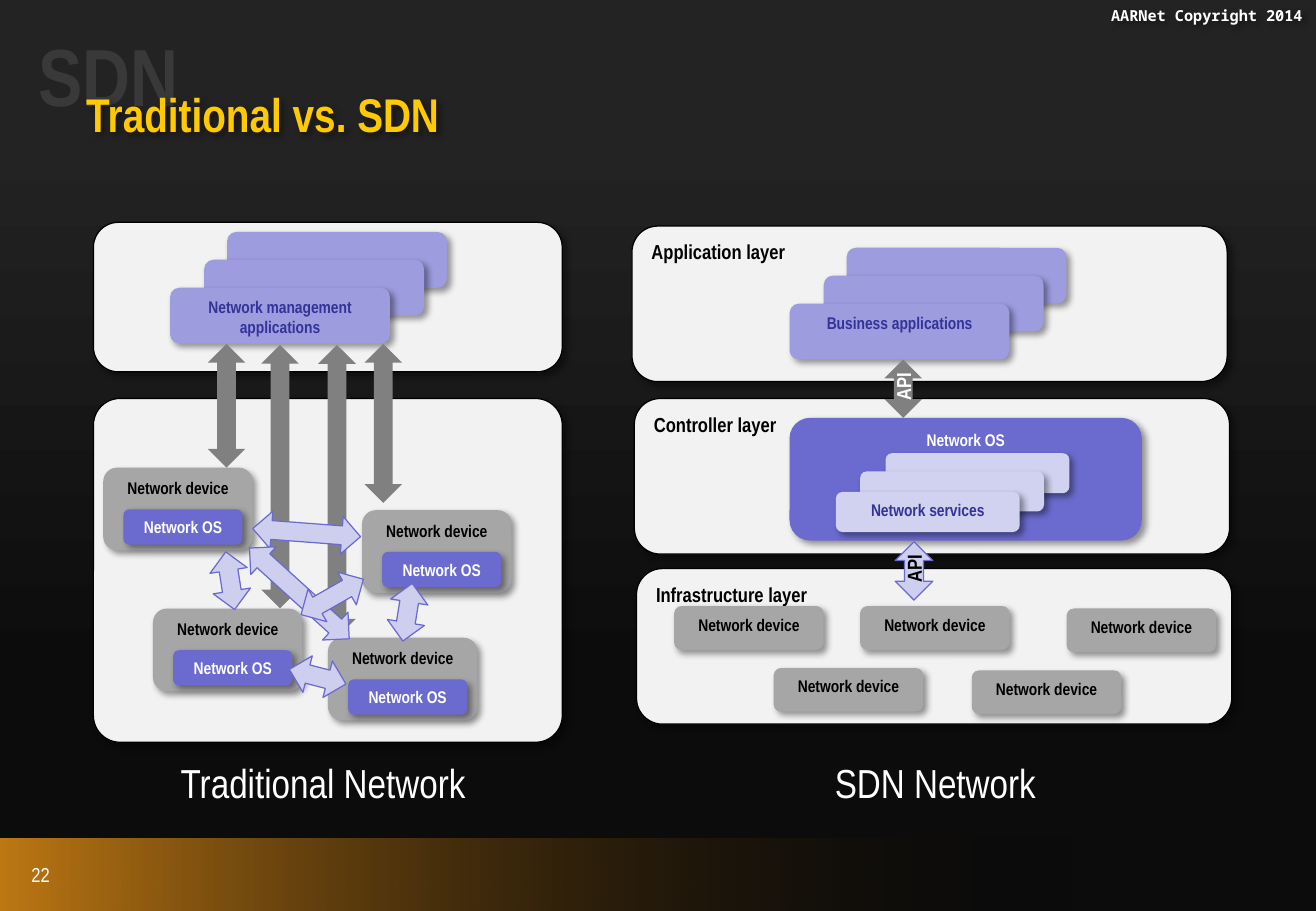
from lxml.etree import SubElement
from pptx import Presentation
from pptx.dml.color import RGBColor
from pptx.enum.shapes import MSO_SHAPE as Kind
from pptx.enum.text import MSO_ANCHOR as Anchor, MSO_AUTO_SIZE as AutoSize, PP_ALIGN as Align
from pptx.oxml.ns import qn
from pptx.util import Pt

COLORS = {
    "ink": "000000", "white": "FFFFFF", "gold": "FFC903", "amber": "D18415",
    "night": "0C0C0C", "dusk": "232323", "panel": "F2F2F2", "device": "A6A6A6",
    "arrow": "808080", "os": "6B6BCF", "app": "9C9CDF", "service": "D1D1F0",
    "link": "CECEEF", "navy": "333399",
}
FONT = "Arial Narrow"

TITLE = "Traditional vs. SDN"
TOPIC = "SDN"
COPYRIGHT = "AARNet Copyright 2014"
PAGE = "22"
CAPTIONS = [("Traditional Network", 21.6), ("SDN Network", 384.5)]

DEVICE, OS = "Network device", "Network OS"
LAYERS = [
    ("Application layer", 374.6, 134),
    ("Controller layer", 376, 236.2),
    ("Infrastructure layer", 377.3, 337),
]
TRADITIONAL_PANELS = [(131.8, 88.6, 0.1667), (236.2, 203.8, 0.078)]

APP_SIZE, APP_STEPS = (130.3, 33.1), [(33.8, -33.1), (20.2, -16.6), (0, 0)]
SERVICE_SIZE, SERVICE_STEPS = (109, 23.8), [(29.5, -23), (14.4, -12.2), (0, 0)]
STACKS = [
    ("Network management applications", (100.8, 170.6), APP_SIZE, APP_STEPS, "app"),
    ("Business applications", (468, 180), APP_SIZE, APP_STEPS, "app"),
    ("Network services", (495.4, 291.6), SERVICE_SIZE, SERVICE_STEPS, "service"),
]

SDN_DEVICES = [(399.6, 359.3), (509.8, 359.3), (632.2, 360.7), (458.6, 396), (576, 397.4)]
TRADITIONAL_DEVICES = [(61.2, 277.2), (214.6, 302.4), (90.7, 360.7), (194.4, 378)]
DEVICE_WIDTH = 88.6
OS_OFFSET, OS_SIZE = (11.9, 24.7), (70.6, 20.9)

ARROW_WIDTH = 22.3
MANAGEMENT_ARROWS = [
    (123.1, 203.8, 73.4), (216, 203.8, 94.3), (154.8, 204.5, 156.2), (188.6, 204.5, 173.5),
]
DEVICE_LINKS = [
    (170.6, 283.7, 64.1, 274.3), (125.3, 326.9, 34.6, 351.2), (230.4, 345.6, 34.6, 9.2),
    (177.1, 383.8, 34.6, 284.5), (166.3, 311.8, 79.9, 312.3), (185.8, 332.6, 42.5, 60.4),
]
APIS = [(524.2, 213.1, "arrow", None, "white"), (530.6, 321.1, "link", "os", "ink")]

deck = Presentation()
deck.slide_width, deck.slide_height = Pt(780), Pt(540)
slide = deck.slides.add_slide(deck.slide_layouts[5])
shapes = slide.shapes


def rgb(name):
    return RGBColor.from_string(COLORS[name])


def set_alpha(color_element, percent):
    SubElement(color_element, qn("a:alpha"), val=str(percent * 1000))


def set_gradient(fill, angle, stops):
    fill.gradient()
    fill.gradient_angle = angle
    for stop, (position, color) in zip(fill.gradient_stops, stops):
        stop.position = position
        stop.color.rgb = rgb(color)


def cast_shadow(shape):
    shape.shadow.inherit = False
    effects = shape.element.spPr.find(qn("a:effectLst"))
    shadow = SubElement(effects, qn("a:outerShdw"), blurRad="50800", dist="38100",
                        dir="2700000", algn="tl", rotWithShape="0")
    set_alpha(SubElement(shadow, qn("a:srgbClr"), val=COLORS["ink"]), 40)


def write(shape, text, size, color, align=Align.CENTER, bold=True, font=FONT):
    frame = shape.text_frame
    frame.word_wrap = True
    frame.auto_size = AutoSize.NONE
    frame.vertical_anchor = Anchor.TOP
    paragraph = frame.paragraphs[0]
    paragraph.alignment = align
    run = paragraph.add_run()
    run.text = text
    run.font.name, run.font.size, run.font.bold = font, Pt(size), bold
    run.font.color.rgb = rgb(color)
    return run


def add_label(x, y, width, height, *text, **style):
    label = shapes.add_textbox(Pt(x), Pt(y), Pt(width), Pt(height))
    write(label, *text, **style)
    return label


def add_block(kind, x, y, width, height, fill, line=None, shadow=True):
    block = shapes.add_shape(kind, Pt(x), Pt(y), Pt(width), Pt(height))
    block.shadow.inherit = False
    block.fill.solid()
    block.fill.fore_color.rgb = rgb(fill)
    if line:
        block.line.color.rgb = rgb(line)
        block.line.width = Pt(0.75)
    else:
        block.line.fill.background()
    if shadow:
        cast_shadow(block)
    return block


def add_card(x, y, width, height, fill, line=None):
    return add_block(Kind.ROUNDED_RECTANGLE, x, y, width, height, fill, line)


def add_arrow(x, y, height, fill, line=None, rotation=0):
    arrow = add_block(Kind.UP_DOWN_ARROW, x, y, ARROW_WIDTH, height, fill, line, shadow=False)
    arrow.rotation = rotation


def add_stack(text, front, size, steps, fill):
    for dx, dy in steps:
        card = add_card(front[0] + dx, front[1] + dy, *size, fill)
    write(card, text, 10, "navy")


set_gradient(slide.background.fill, 90, [(0.26, "night"), (0.85, "dusk")])
band = add_block(Kind.RECTANGLE, -1.4, 496.8, 639.4, 43.2, "ink", shadow=False)
set_gradient(band.fill, 180, [(0, "ink"), (1, "amber")])
for color_element, percent in zip(band.element.spPr.iter(qn("a:srgbClr")), (0, 91)):
    set_alpha(color_element, percent)

cast_shadow(add_label(617.8, 0, 161.3, 37.4, COPYRIGHT, 9, "white",
                      align=Align.RIGHT, font="Noto Sans Mono"))
add_label(1.4, 507.6, 45.4, 28, PAGE, 12, "white", bold=False)
topic = add_label(15.8, 11.5, 601, 65.5, TOPIC, 48, "white", align=Align.LEFT)
set_alpha(next(topic.element.txBody.iter(qn("a:srgbClr"))), 10)

title = shapes.title
title.left, title.top, title.width, title.height = Pt(43.9), Pt(50.5), Pt(730), Pt(40)
write(title, TITLE, 28, "gold", align=Align.LEFT)
title.text_frame.paragraphs[0].line_spacing = 0.9
cast_shadow(title)
topic.element.addnext(title.element)

for name, x, y in LAYERS:
    write(add_card(x, y, 352.8, 92.2, "panel", "ink"), name, 12, "ink", align=Align.LEFT)
for y, height, rounding in TRADITIONAL_PANELS:
    add_card(55.4, y, 277.9, height, "panel", "ink").adjustments[0] = rounding

write(add_card(468, 247.7, 208.8, 72.7, "os"), OS, 10, "white")
for stack in STACKS:
    add_stack(*stack)

for x, y in SDN_DEVICES:
    write(add_card(x, y, DEVICE_WIDTH, 25.9, "device"), DEVICE, 10, "ink")
for x, y in TRADITIONAL_DEVICES:
    write(add_card(x, y, DEVICE_WIDTH, 49, "device"), DEVICE, 10, "ink")
    write(add_card(x + OS_OFFSET[0], y + OS_OFFSET[1], *OS_SIZE, "os"), OS, 10, "white")

for x, y, height in MANAGEMENT_ARROWS:
    add_arrow(x, y, height, "arrow")
for x, y, height, rotation in DEVICE_LINKS:
    add_arrow(x, y, height, "link", "os", rotation)
for x, y, fill, line, color in APIS:
    add_arrow(x, y, 34.6, fill, line)
    add_label(x - 15.9, y - 6.5, 54, 21.6, "API", 12, color, align=Align.LEFT).rotation = 270

for caption, x in CAPTIONS:
    add_label(x, 445.7, 339.8, 36, caption, 24, "white", bold=False)

deck.save("out.pptx")
